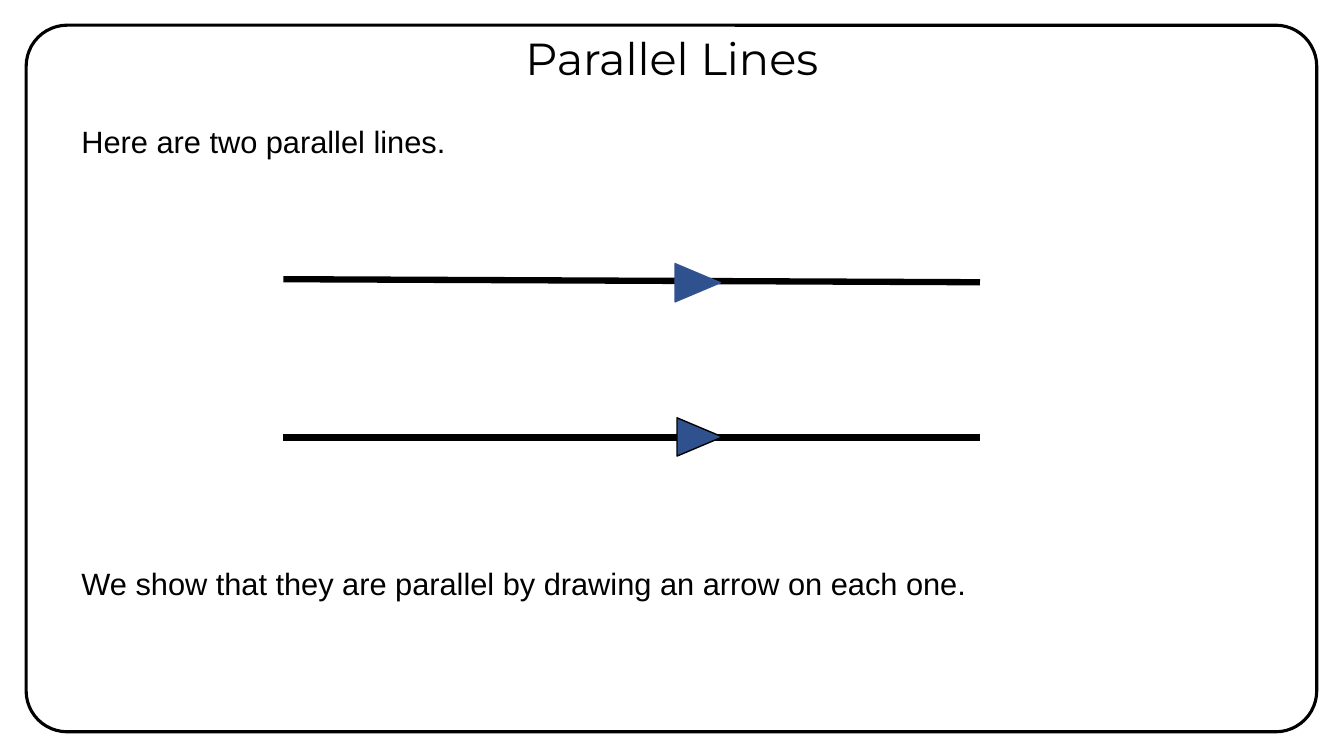
from lxml.etree import SubElement
from pptx import Presentation
from pptx.dml.color import RGBColor
from pptx.enum.shapes import MSO_CONNECTOR, MSO_SHAPE
from pptx.enum.text import MSO_ANCHOR, PP_ALIGN
from pptx.oxml.ns import qn
from pptx.util import Inches, Pt

COLORS = {"ink": "000000", "paper": "FFFFFF", "arrow": "2F528F", "arrow_edge": "325491"}


def color(name):
    return RGBColor.from_string(COLORS[name])


def add_outlined(kind, box, fill, edge, width):
    outlined = slide.shapes.add_shape(kind, *map(Inches, box))
    outlined.shadow.inherit = False
    outlined.fill.solid()
    outlined.fill.fore_color.rgb = color(fill)
    outlined.line.color.rgb = color(edge)
    outlined.line.width = Pt(width)
    return outlined


prs = Presentation()
prs.slide_width, prs.slide_height = Inches(13.33), Inches(7.5)
slide = prs.slides.add_slide(prs.slide_layouts[6])

# Rounded frame
frame = add_outlined(MSO_SHAPE.ROUNDED_RECTANGLE, (0.26, 0.25, 12.8, 7.01), "paper", "ink", 2.25)
frame.adjustments[0] = 0.058

# Title and sentences
texts = [
    ("Parallel Lines", (3.98, 0.26, 5.37, 0.64), "Montserrat", 32, PP_ALIGN.CENTER),
    ("Here are two parallel lines.", (0.71, 1.17, 5.8, 0.47), "Arial", 22, PP_ALIGN.LEFT),
    ("We show that they are parallel by drawing an arrow on each one.",
     (0.71, 5.55, 9.27, 0.47), "Arial", 22, PP_ALIGN.LEFT),
]
for wording, box, font_name, size, align in texts:
    caption = slide.shapes.add_textbox(*map(Inches, box))
    caption.text_frame.word_wrap = True
    caption.text_frame.vertical_anchor = MSO_ANCHOR.TOP
    paragraph = caption.text_frame.paragraphs[0]
    paragraph.text = wording
    paragraph.alignment = align
    paragraph.font.name = font_name
    paragraph.font.size = Pt(size)
    paragraph.font.color.rgb = color("ink")

# Parallel lines, each with its arrow: start y, end y, arrow left, arrow top, arrow edge
for start_y, end_y, arrow_left, arrow_top, edge in [
    (2.77, 2.8, 6.73, 2.58, "arrow_edge"),
    (4.34, 4.34, 6.75, 4.11, "ink"),
]:
    parallel = slide.shapes.add_connector(
        MSO_CONNECTOR.STRAIGHT, Inches(2.81), Inches(start_y), Inches(9.72), Inches(end_y))
    parallel.line.color.rgb = color("ink")
    parallel.line.width = Pt(4.5)
    SubElement(parallel._element.spPr, qn("a:effectLst"))
    arrow = add_outlined(MSO_SHAPE.ISOSCELES_TRIANGLE, (arrow_left, arrow_top, 0.38, 0.45),
                         "arrow", edge, 1)
    arrow.rotation = 90

prs.save("out.pptx")
